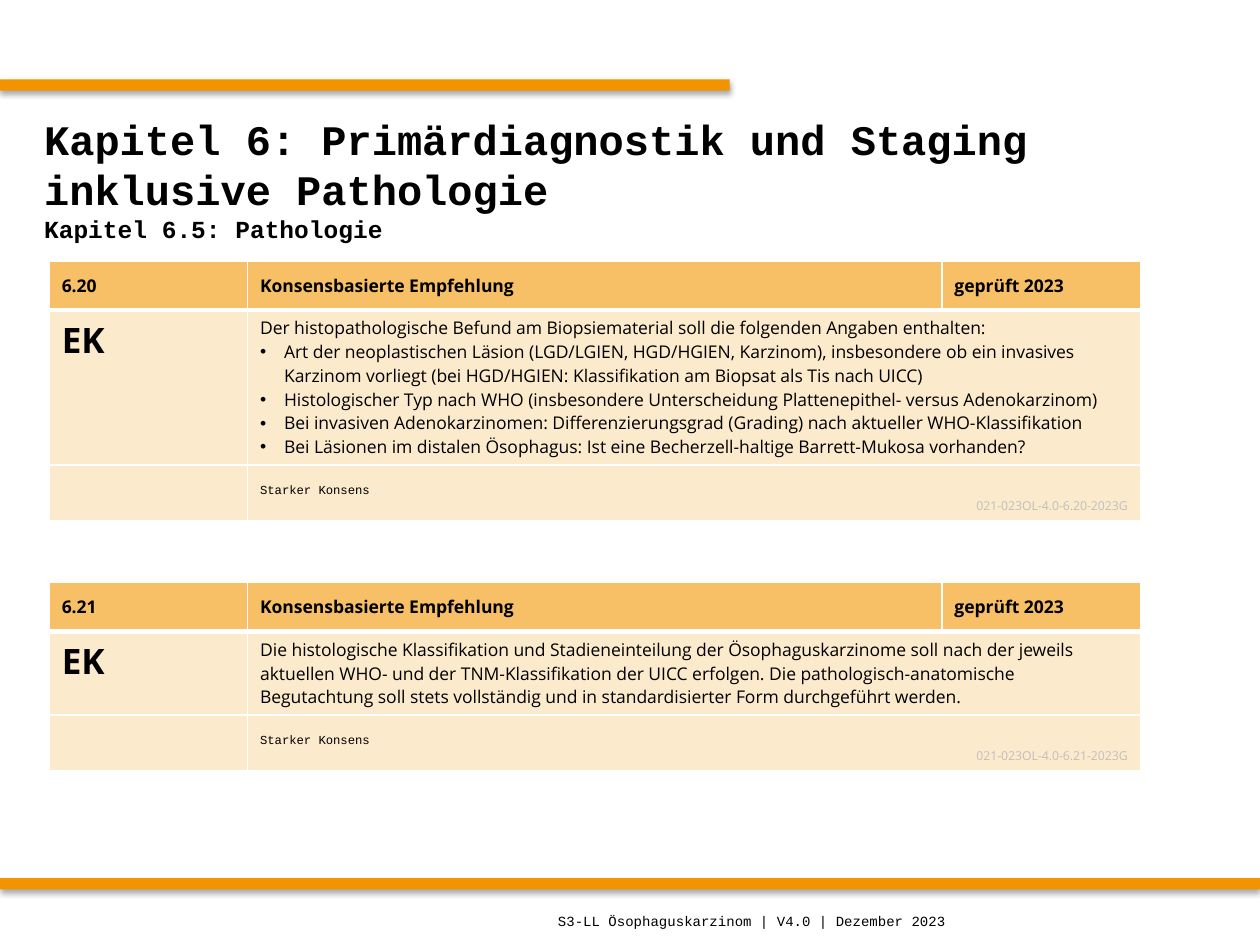
from lxml import etree
from pptx import Presentation
from pptx.dml.color import RGBColor
from pptx.enum.shapes import MSO_SHAPE
from pptx.enum.text import MSO_ANCHOR, MSO_AUTO_SIZE, PP_ALIGN
from pptx.oxml import parse_xml
from pptx.oxml.ns import nsdecls, qn
from pptx.util import Inches, Pt

RECTANGLE = MSO_SHAPE.RECTANGLE
TOP, MIDDLE, BOTTOM = MSO_ANCHOR.TOP, MSO_ANCHOR.MIDDLE, MSO_ANCHOR.BOTTOM
LEFT, RIGHT = PP_ALIGN.LEFT, PP_ALIGN.RIGHT
NO_AUTOFIT = MSO_AUTO_SIZE.NONE

BLACK = RGBColor(0x00, 0x00, 0x00)
GREY = RGBColor(0xBF, 0xBF, 0xBF)
ORANGE = RGBColor(0xF2, 0x94, 0x00)
HEADER_FILL = RGBColor(0xF7, 0xBF, 0x66)
BODY_FILL = RGBColor(0xFC, 0xEA, 0xCC)

MONO, SANS = "Courier New", "Open Sans"
SLIDE_WIDTH, SLIDE_HEIGHT = Inches(10), Inches(7.5)
COLUMN_SHARES = (2, 7, 2)
HEADER_ROW, GRADE_ROW = 5.2, 5.87

RECOMMENDATIONS = [
    {
        "number": "6.20",
        "top": 27.6,
        "body_row": 16.4,
        "text": "Der histopathologische Befund am Biopsiematerial soll die folgenden Angaben enthalten:",
        "bullets": [
            "Art der neoplastischen Läsion (LGD/LGIEN, HGD/HGIEN, Karzinom), insbesondere ob ein "
            "invasives Karzinom vorliegt (bei HGD/HGIEN: Klassifikation am Biopsat als Tis nach UICC)",
            "Histologischer Typ nach WHO (insbesondere Unterscheidung Plattenepithel- versus Adenokarzinom)",
            "Bei invasiven Adenokarzinomen: Differenzierungsgrad (Grading) nach aktueller WHO-Klassifikation",
            "Bei Läsionen im distalen Ösophagus: Ist eine Becherzell-haltige Barrett-Mukosa vorhanden?",
        ],
    },
    {
        "number": "6.21",
        "top": 61.6,
        "body_row": 8.8,
        "text": "Die histologische Klassifikation und Stadieneinteilung der Ösophaguskarzinome soll nach der "
        "jeweils aktuellen WHO- und der TNM-Klassifikation der UICC erfolgen. Die "
        "pathologisch-anatomische Begutachtung soll stets vollständig und in standardisierter Form "
        "durchgeführt werden.",
        "bullets": [],
    },
]


def percent_box(left, top, width, height):
    return (
        int(SLIDE_WIDTH * left / 100),
        int(SLIDE_HEIGHT * top / 100),
        int(SLIDE_WIDTH * width / 100),
        int(SLIDE_HEIGHT * height / 100),
    )


def format_paragraph(paragraph, size, name=SANS, bold=False, color=BLACK, align=LEFT):
    paragraph.alignment = align
    for run in paragraph.runs:
        run.font.size = Pt(size)
        run.font.name = name
        run.font.bold = bold
        run.font.color.rgb = color


def add_bullet(paragraph):
    properties = paragraph._p.get_or_add_pPr()
    properties.set("marL", str(Inches(0.19)))
    properties.set("indent", str(-Inches(0.19)))
    etree.SubElement(properties, qn("a:buFont")).set("typeface", "Arial")
    etree.SubElement(properties, qn("a:buChar")).set("char", "•")


def add_bar(slide, box):
    bar = slide.shapes.add_shape(RECTANGLE, *box)
    bar.fill.solid()
    bar.fill.fore_color.rgb = ORANGE
    bar.line.fill.background()
    bar._element.spPr.append(parse_xml(
        f'<a:effectLst {nsdecls("a")}><a:outerShdw blurRad="40000" dist="23000" dir="5400000" '
        'rotWithShape="0"><a:srgbClr val="000000"><a:alpha val="35000"/></a:srgbClr>'
        '</a:outerShdw></a:effectLst>'
    ))


def place_title(slide, box):
    title = slide.shapes.title
    title.left, title.top, title.width, title.height = box
    frame = title.text_frame
    frame.auto_size = NO_AUTOFIT
    frame.vertical_anchor = MIDDLE
    frame.text = "Kapitel 6: Primärdiagnostik und Staging inklusive Pathologie\nKapitel 6.5: Pathologie"
    for paragraph, size in zip(frame.paragraphs, (24, 14)):
        format_paragraph(paragraph, size, MONO, True)


def style_cell(cell, color, anchor, top_width, bottom_width):
    cell.fill.solid()
    cell.fill.fore_color.rgb = color
    cell.vertical_anchor = anchor
    properties = cell._tc.get_or_add_tcPr()
    sides = (("L", 1), ("R", 1), ("T", top_width), ("B", bottom_width))
    for position, (side, width) in enumerate(sides):
        properties.insert(position, parse_xml(
            f'<a:ln{side} {nsdecls("a")} w="{Pt(width)}"><a:solidFill>'
            f'<a:srgbClr val="FFFFFF"/></a:solidFill></a:ln{side}>'
        ))


def add_recommendation(slide, recommendation, box):
    left, top, width, height = box
    table = slide.shapes.add_table(3, len(COLUMN_SHARES), left, top, width, height).table
    for column, share in zip(table.columns, COLUMN_SHARES):
        column.width = width * share // sum(COLUMN_SHARES)
    row_shares = (HEADER_ROW, recommendation["body_row"], GRADE_ROW)
    for row, share in zip(table.rows, row_shares):
        row.height = int(height * share / sum(row_shares))

    row_styles = ((HEADER_FILL, MIDDLE, 1, 3), (BODY_FILL, TOP, 3, 1), (BODY_FILL, BOTTOM, 1, 1))
    for row, style in zip(table.rows, row_styles):
        for cell in row.cells:
            style_cell(cell, *style)
    for row_index in (1, 2):
        table.cell(row_index, 1).merge(table.cell(row_index, 2))

    number = recommendation["number"]
    headings = (number, "Konsensbasierte Empfehlung", "geprüft 2023")
    for cell, heading in zip(table.rows[0].cells, headings):
        cell.text = heading
        format_paragraph(cell.text_frame.paragraphs[0], 10, bold=True)

    level = table.cell(1, 0)
    level.text = "EK"
    format_paragraph(level.text_frame.paragraphs[0], 20, bold=True)

    body = table.cell(1, 1).text_frame
    body.text = "\n".join([recommendation["text"], *recommendation["bullets"]])
    for index, paragraph in enumerate(body.paragraphs):
        if index:
            add_bullet(paragraph)
        format_paragraph(paragraph, 10)

    grade = table.cell(2, 1).text_frame
    grade.text = f"Starker Konsens\n021-023OL-4.0-{number}-2023G"
    consensus, code = grade.paragraphs
    format_paragraph(consensus, 7, MONO)
    format_paragraph(code, 7, color=GREY, align=RIGHT)


def add_footer(slide, box):
    frame = slide.shapes.add_textbox(*box).text_frame
    frame.word_wrap = True
    frame.vertical_anchor = MIDDLE
    frame.text = "S3-LL Ösophaguskarzinom | V4.0 | Dezember 2023"
    format_paragraph(frame.paragraphs[0], 8, MONO)


def main():
    presentation = Presentation()
    presentation.slide_width, presentation.slide_height = SLIDE_WIDTH, SLIDE_HEIGHT
    slide = presentation.slides.add_slide(presentation.slide_layouts[5])
    add_bar(slide, percent_box(0, 8.4, 57.9, 1.2))
    add_bar(slide, percent_box(0, 92.93, 100, 1.2))
    place_title(slide, percent_box(2.5, 11.07, 95, 15.6))
    for recommendation in RECOMMENDATIONS:
        height = HEADER_ROW + recommendation["body_row"] + GRADE_ROW
        add_recommendation(slide, recommendation, percent_box(3.9, recommendation["top"], 86.6, height))
    add_footer(slide, percent_box(43.3, 94.8, 55.1, 5.2))
    presentation.save("out.pptx")


if __name__ == "__main__":
    main()
